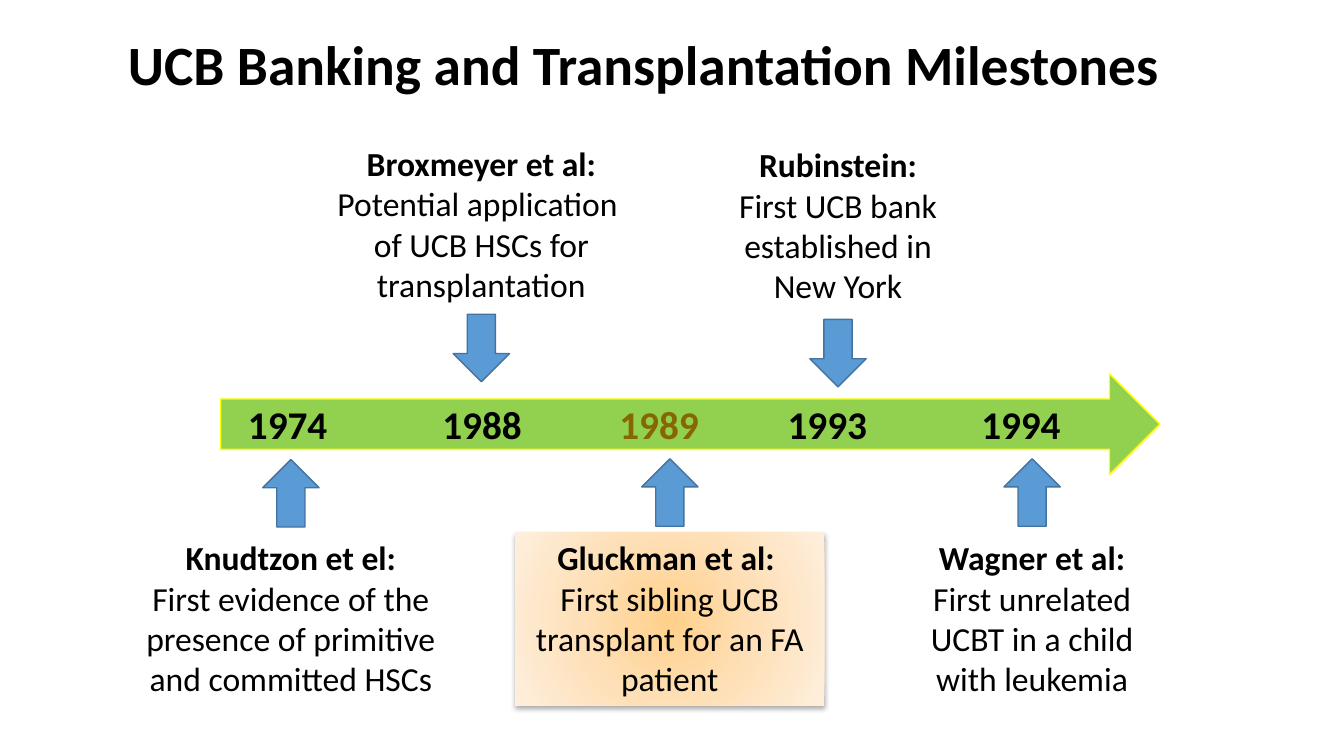
from pptx import Presentation
from pptx.dml.color import RGBColor
from pptx.enum.shapes import MSO_SHAPE
from pptx.enum.text import MSO_ANCHOR, MSO_AUTO_SIZE, PP_ALIGN
from pptx.oxml import parse_xml
from pptx.oxml.ns import nsdecls, qn
from pptx.util import Cm, Pt

RECT = MSO_SHAPE.RECTANGLE
RIGHT = MSO_SHAPE.RIGHT_ARROW
DOWN = MSO_SHAPE.DOWN_ARROW
MIDDLE = MSO_ANCHOR.MIDDLE
TOP = MSO_ANCHOR.TOP
NO_FIT = MSO_AUTO_SIZE.NONE
LEFT = PP_ALIGN.LEFT
CENTER = PP_ALIGN.CENTER

FONT = "Calibri"
BLACK = "000000"
GLOW = [(0, "FFD08A"), (50, "FEE0B8"), (100, "FEEFDD")]
ARROW_W, ARROW_H = 1.42, 1.7
NOTE_H = 4.37

YEARS = [
    ("1974", 1.44, BLACK),
    ("1988", 6.34, BLACK),
    ("1989", 10.8, "866600"),
    ("1993", 15.04, BLACK),
    ("1994", 19.92, BLACK),
]

EVENTS = [
    (7.33, 13.41, 9.19, 11.58, False,
     ["Knudtzon et el:", "First evidence of the presence of primitive and committed HSCs"]),
    (12.13, 3.48, 8.92, 7.92, False,
     ["Broxmeyer et al:", "Potential application ", "of UCB HSCs for transplantation"]),
    (16.88, 13.41, 7.8, 11.56, True,
     ["Gluckman et al: ", "First sibling UCB transplant for an FA patient"]),
    (21.12, 3.51, 6.81, 8.05, False,
     ["Rubinstein:", "First UCB bank established in New York"]),
    (26.01, 13.41, 6.91, 11.56, False,
     ["Wagner et al:", "First unrelated UCBT in a child with leukemia"]),
]


def color(code):
    return RGBColor.from_string(code)


def style(font, size, bold, code=BLACK):
    font.name = FONT
    font.size = Pt(size)
    font.bold = bold
    font.color.rgb = color(code)


def add_block(slide, kind, box, fill, edge):
    block = slide.shapes.add_shape(kind, *map(Cm, box))
    block.shadow.inherit = False
    block.fill.solid()
    block.fill.fore_color.rgb = color(fill)
    block.line.color.rgb = color(edge)
    block.line.width = Pt(1)
    return block


def add_title(slide, box, text):
    title = slide.shapes.title
    title.left, title.top, title.width, title.height = map(Cm, box)
    frame = title.text_frame
    frame.text = text
    frame.auto_size = NO_FIT
    frame.vertical_anchor = MIDDLE
    line = frame.paragraphs[0]
    line.alignment = LEFT
    line.line_spacing = 0.9
    style(line.runs[0].font, 39.6, True)


def add_band(slide, box):
    band = add_block(slide, RIGHT, box, "92D050", "FFFF00")
    frame = band.text_frame
    frame.vertical_anchor = MIDDLE
    line = frame.paragraphs[0]
    line.alignment = LEFT
    stops = "".join(f'<a:tab pos="{Cm(pos)}" algn="ctr"/>' for _, pos, _ in YEARS)
    props = line._p.get_or_add_pPr()
    props.append(parse_xml(f'<a:tabLst {nsdecls("a")}>{stops}</a:tabLst>'))
    for year, _, code in YEARS:
        run = line.add_run()
        run.text = "\t" + year
        style(run.font, 28, True, code)


def add_glow(card):
    card.shadow.inherit = False
    card.line.fill.background()
    card.fill.gradient()
    stops = "".join(
        f'<a:gs pos="{pos * 1000}"><a:srgbClr val="{code}"/></a:gs>' for pos, code in GLOW)
    props = card._element.spPr
    props.replace(props.find(qn("a:gradFill")), parse_xml(
        f'<a:gradFill {nsdecls("a")} rotWithShape="1"><a:gsLst>{stops}</a:gsLst>'
        '<a:path path="circle"><a:fillToRect l="50000" t="50000" r="50000" b="50000"/>'
        '</a:path></a:gradFill>'))
    props.find(qn("a:effectLst")).append(parse_xml(
        f'<a:outerShdw {nsdecls("a")} blurRad="{Pt(3.5)}" dist="{Pt(2.2)}" dir="5400000" '
        f'algn="ctr" rotWithShape="0"><a:srgbClr val="{BLACK}"><a:alpha val="32000"/>'
        '</a:srgbClr></a:outerShdw>'))


def add_event(slide, box, tip, glow, lines):
    left, top, width, height = box
    place = [Cm(size) for size in box]
    if glow:
        note = slide.shapes.add_shape(RECT, *place)
        add_glow(note)
    else:
        note = slide.shapes.add_textbox(*place)
    frame = note.text_frame
    frame.word_wrap = True
    frame.vertical_anchor = TOP
    frame.text = "\n".join(lines)
    for row, line in enumerate(frame.paragraphs):
        line.alignment = CENTER
        style(line.runs[0].font, 24, row == 0)
    mid = left + width / 2
    arrow = add_block(slide, DOWN, (mid - ARROW_W / 2, tip, ARROW_W, ARROW_H),
                      "5B9BD5", "43739E")
    if tip < top:
        arrow.rotation = 180


def main():
    deck = Presentation()
    deck.slide_width, deck.slide_height = Cm(33.87), Cm(19.05)
    slide = deck.slides.add_slide(deck.slide_layouts[5])
    add_title(slide, (2.97, 0.1, 28.78, 3.18), "UCB Banking and Transplantation Milestones")
    add_band(slide, (5.56, 9.42, 23.67, 2.54))
    for mid, top, width, tip, glow, lines in EVENTS:
        add_event(slide, (mid - width / 2, top, width, NOTE_H), tip, glow, lines)
    deck.save("out.pptx")


if __name__ == "__main__":
    main()
